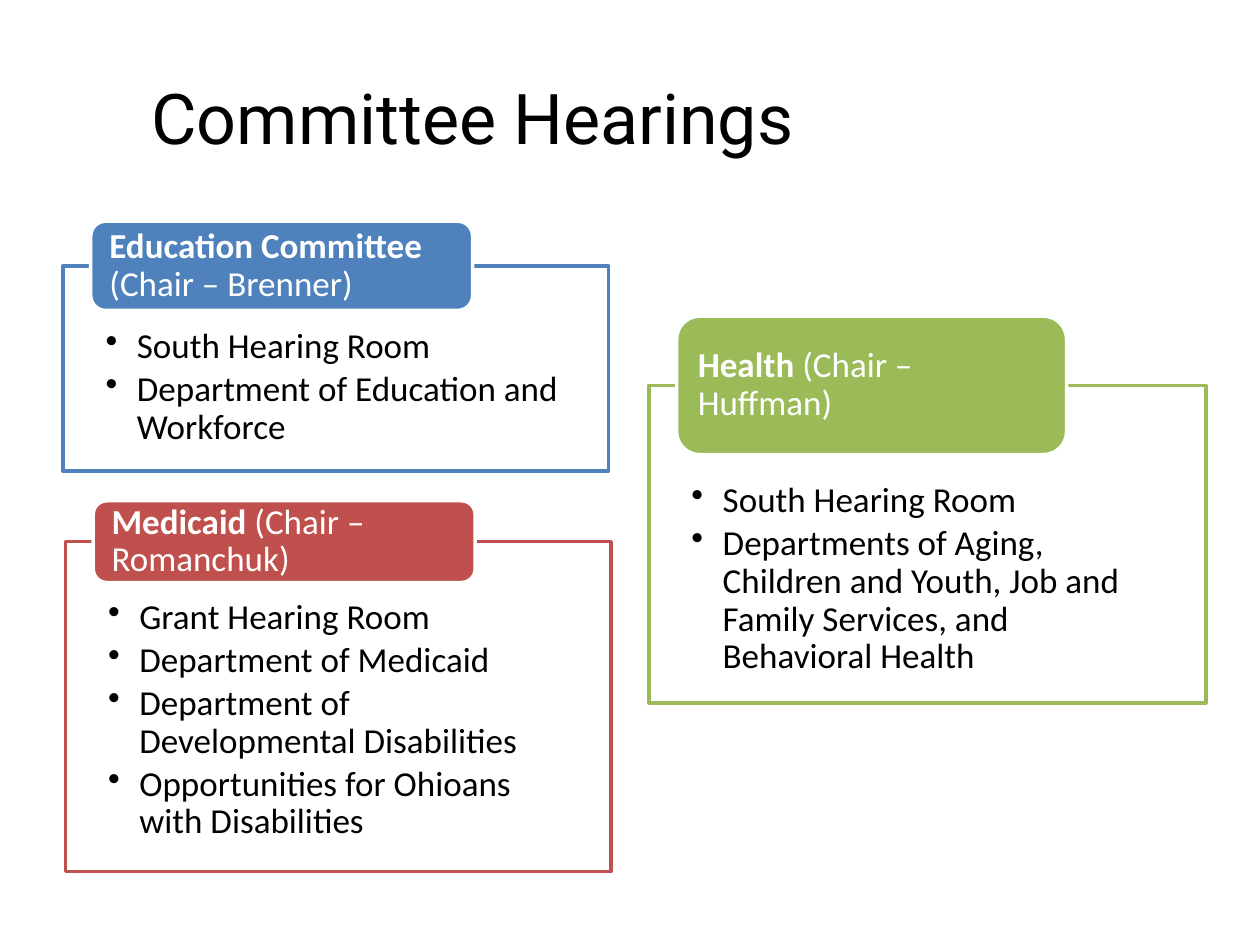
from lxml import etree
from pptx import Presentation
from pptx.dml.color import RGBColor
from pptx.enum.shapes import MSO_SHAPE
from pptx.enum.text import MSO_ANCHOR, PP_ALIGN
from pptx.oxml.ns import qn
from pptx.util import Cm, Pt

RECTANGLE, ROUNDED = MSO_SHAPE.RECTANGLE, MSO_SHAPE.ROUNDED_RECTANGLE
TOP, MIDDLE = MSO_ANCHOR.TOP, MSO_ANCHOR.MIDDLE
LEFT, CENTER = PP_ALIGN.LEFT, PP_ALIGN.CENTER
COLORS = {
    "black": "000000",
    "white": "FFFFFF",
    "blue": "4F81BD",
    "red": "C0504D",
    "green": "9BBB59",
}
COMMITTEES = [
    ("green", (13.08, 7.77, 11.23, 6.4), 2.79,
     [("Health", True), (" (Chair – Huffman)", False)],
     ["South Hearing Room",
      "Departments of Aging, Children and Youth, Job and Family Services, "
      "and Behavioral Health"]),
    ("blue", (1.27, 5.36, 11, 4.14), 1.8,
     [("Education Committee ", True), ("(Chair – Brenner)", False)],
     ["South Hearing Room", "Department of Education and Workforce"]),
    ("red", (1.32, 10.92, 11, 6.65), 1.65,
     [("Medicaid", True), (" (Chair – Romanchuk)", False)],
     ["Grant Hearing Room", "Department of Medicaid",
      "Department of Developmental Disabilities",
      "Opportunities for Ohioans with Disabilities"]),
]


def rgb(name):
    return RGBColor.from_string(COLORS[name])


def write(frame, paragraphs, font="Calibri", size=20, color="black", align=LEFT,
          anchor=TOP, insets=(0.25, 0.13, 0.25, 0.13), spacing=0.9, after=0,
          bullet=False):
    """Fill a text frame with paragraphs, each a list of (text, bold) runs."""
    frame.word_wrap = True
    frame.vertical_anchor = anchor
    (frame.margin_left, frame.margin_top,
     frame.margin_right, frame.margin_bottom) = map(Cm, insets)
    for index, runs in enumerate(paragraphs):
        paragraph = frame.add_paragraph() if index else frame.paragraphs[0]
        paragraph.alignment = align
        paragraph.line_spacing = spacing
        paragraph.space_after = Pt(after)
        if bullet:
            properties = paragraph._p.get_or_add_pPr()
            properties.set("marL", str(Cm(0.63)))
            properties.set("indent", str(Cm(-0.63)))
            etree.SubElement(properties, qn("a:buChar"), char="•")
        for text, bold in runs:
            run = paragraph.add_run()
            run.text = text
            run.font.name, run.font.size, run.font.bold = font, Pt(size), bold
            run.font.color.rgb = rgb(color)


class CommitteeSlide:
    """Draw the committee panels in one shared style."""

    def __init__(self, slide):
        self.slide = slide
        self.line_width = Pt(2)
        self.label_indent = 0.56
        self.label_share = 0.7

    def title(self, text, left, top, width, height):
        heading = self.slide.shapes.add_textbox(*map(Cm, (left, top, width, height)))
        write(heading.text_frame, [[(text, False)]], font="Roboto", size=40,
              align=CENTER, anchor=MIDDLE, spacing=1.0)

    def box(self, kind, area, fill, line):
        outline = self.slide.shapes.add_shape(kind, *map(Cm, area))
        outline.shadow.inherit = False
        outline.fill.solid()
        outline.fill.fore_color.rgb = rgb(fill)
        outline.line.color.rgb = rgb(line)
        outline.line.width = self.line_width
        return outline.text_frame

    def committee(self, color, area, label_height, name, details):
        left, top, width, _ = area
        body = self.box(RECTANGLE, area, "white", color)
        write(body, [[(detail, False)] for detail in details], after=3, bullet=True,
              insets=(0.86, 0.7 * label_height, 0.86, 0.41))
        label_area = (left + self.label_indent, top - label_height / 2,
                      width * self.label_share, label_height)
        label = self.box(ROUNDED, label_area, color, "white")
        write(label, [name], color="white", anchor=MIDDLE, insets=(0.29, 0, 0.29, 0))


def main():
    deck = Presentation()
    deck.slide_width, deck.slide_height = Cm(25.4), Cm(19.05)
    hearings = CommitteeSlide(deck.slides.add_slide(deck.slide_layouts[6]))
    hearings.title("Committee Hearings", 1.27, 0.76, 16.51, 3.18)
    for committee in COMMITTEES:
        hearings.committee(*committee)
    deck.save("out.pptx")


if __name__ == "__main__":
    main()
